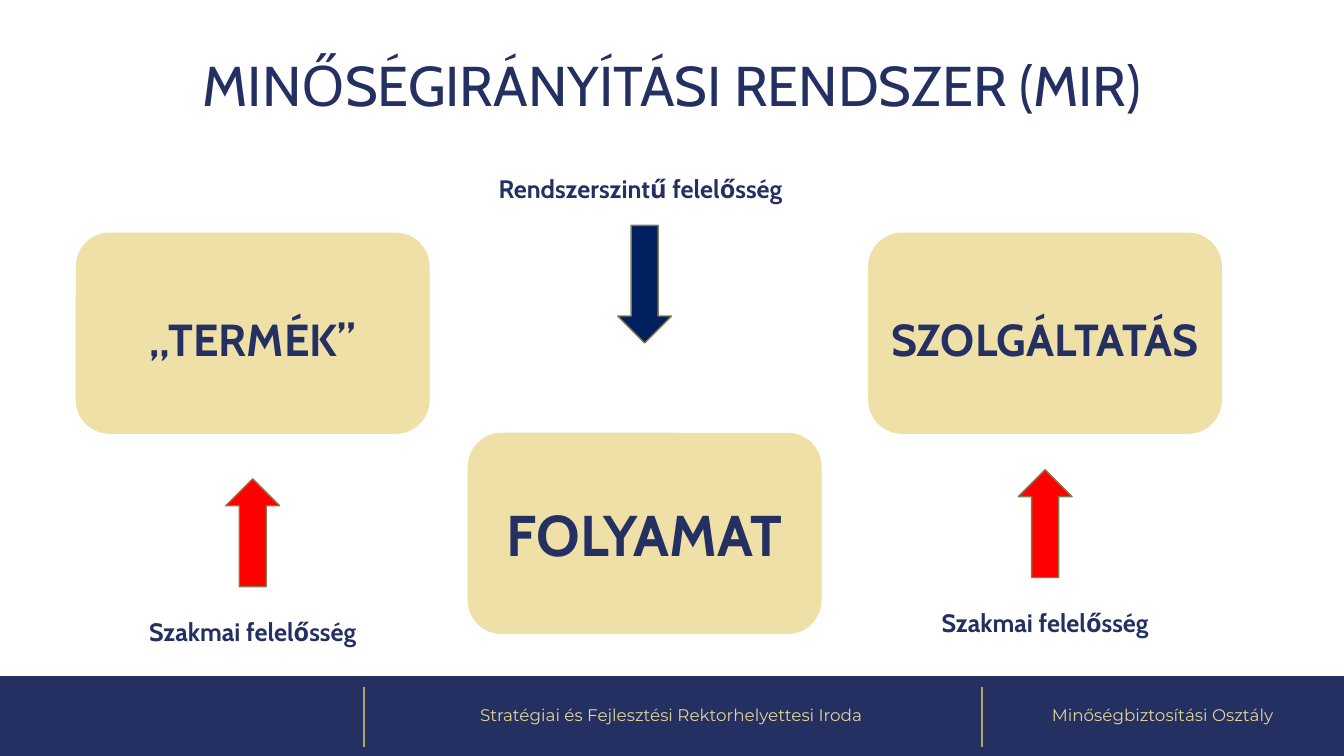
import dataclasses

import lxml.etree
import pptx
import pptx.dml.color
import pptx.enum.shapes
import pptx.enum.text
import pptx.oxml.ns
import pptx.util

Pt = pptx.util.Pt
SHAPE = pptx.enum.shapes.MSO_SHAPE
MIDDLE = pptx.enum.text.MSO_ANCHOR.MIDDLE
TOP = pptx.enum.text.MSO_ANCHOR.TOP


@dataclasses.dataclass(frozen=True)
class Theme:
    """Colours, fonts and type sizes of the slide."""
    navy: str = "242F62"
    gold: str = "E3D496"
    card: str = "EFE0A7"
    divider: str = "B3A16E"
    arrow_edge: str = "847751"
    system: str = "002060"
    professional: str = "FF0000"
    heading_font: str = "Cabin"
    footer_font: str = "Montserrat"
    title_size: int = 40
    process_size: int = 41
    card_size: int = 32
    label_size: int = 18
    footer_size: int = 12


THEME = Theme()


def rgb(colour):
    """Turn a hex string into a colour."""
    return pptx.dml.color.RGBColor.from_string(colour)


def place(shape, box):
    """Set the position and size of a shape in points."""
    shape.left, shape.top, shape.width, shape.height = map(Pt, box)


def write(shape, text, size, colour, font, bold=False, anchor=MIDDLE, spacing=1.0):
    """Put one centred, formatted paragraph into a shape."""
    frame = shape.text_frame
    frame.text = text
    frame.word_wrap = True
    frame.auto_size = pptx.enum.text.MSO_AUTO_SIZE.NONE
    frame.vertical_anchor = anchor
    paragraph = frame.paragraphs[0]
    paragraph.alignment = pptx.enum.text.PP_ALIGN.CENTER
    paragraph.line_spacing = spacing
    paragraph.space_before = Pt(0)
    letters = paragraph.runs[0].font
    letters.size = Pt(size)
    letters.name = font
    letters.bold = bold
    letters.color.rgb = rgb(colour)


def add_figure(slide, kind, box, fill, edge=None, edge_width=1):
    """Add a flat filled preset shape."""
    figure = slide.shapes.add_shape(kind, *map(Pt, box))
    figure.shadow.inherit = False
    figure.fill.solid()
    figure.fill.fore_color.rgb = rgb(fill)
    if edge:
        figure.line.color.rgb = rgb(edge)
        figure.line.width = Pt(edge_width)
    else:
        figure.line.fill.background()
    return figure


def add_card(slide, text, left, top, size, drop=0):
    """Add a rounded card, its text lowered by a top inset."""
    card = add_figure(slide, SHAPE.ROUNDED_RECTANGLE, (left, top, 252, 143),
                      THEME.card, THEME.card, 0.75)
    write(card, text, size, THEME.navy, THEME.heading_font, bold=True)
    card.text_frame.margin_top = Pt(3.6 + drop)


def add_arrow(slide, left, top, height, fill, rotation=0):
    """Add a block arrow that points down unless rotated."""
    arrow = add_figure(slide, SHAPE.DOWN_ARROW, (left, top, 38.5, height),
                       fill, THEME.arrow_edge)
    arrow.rotation = rotation


def add_label(slide, text, left, top, width):
    """Add a bold responsibility label."""
    label = slide.shapes.add_textbox(Pt(left), Pt(top), Pt(width), Pt(29))
    write(label, text, THEME.label_size, THEME.navy, THEME.heading_font,
          bold=True, anchor=TOP)


def add_divider(slide, x):
    """Add a vertical footer divider."""
    divider = slide.shapes.add_connector(
        pptx.enum.shapes.MSO_CONNECTOR.STRAIGHT, Pt(x), Pt(491), Pt(x), Pt(533.5))
    divider.line.color.rgb = rgb(THEME.divider)
    divider.line.width = Pt(1.5)
    lxml.etree.SubElement(divider._element.spPr, pptx.oxml.ns.qn("a:effectLst"))


def write_footer(placeholder, text, left, width):
    """Turn a body placeholder into an unbulleted footer entry."""
    place(placeholder, (left, 483, width, 57))
    write(placeholder, text, THEME.footer_size, THEME.gold, THEME.footer_font,
          spacing=0.9)
    properties = placeholder.text_frame.paragraphs[0]._p.get_or_add_pPr()
    properties.set("marL", "0")
    properties.set("indent", "0")
    lxml.etree.SubElement(properties, pptx.oxml.ns.qn("a:buNone"))


def main():
    """Build and save the slide."""
    deck = pptx.Presentation()
    deck.slide_width, deck.slide_height = Pt(960), Pt(540)
    slide = deck.slides.add_slide(deck.slide_layouts[3])
    title, office, department = slide.placeholders

    footer_bar = add_figure(slide, SHAPE.RECTANGLE, (0, 483, 960, 57), THEME.navy)
    title._element.addprevious(footer_bar._element)
    for x in (260, 701.5):
        add_divider(slide, x)

    place(title, (66, 27.5, 828, 71))
    write(title, "MINŐSÉGIRÁNYÍTÁSI RENDSZER (MIR)", THEME.title_size,
          THEME.navy, THEME.heading_font, spacing=0.9)
    write_footer(office, "Stratégiai és Fejlesztési Rektorhelyettesi Iroda", 258.5, 442)
    write_footer(department, "Minőségbiztosítási Osztály", 701, 259)

    add_card(slide, "FOLYAMAT", 334.5, 309.5, THEME.process_size)
    add_label(slide, "Rendszerszintű felelősség", 295, 120.5, 325)
    add_arrow(slide, 441.25, 161, 84, THEME.system)

    sides = (("„TERMÉK”", 54.5, 342), ("SZOLGÁLTATÁS", 620.5, 335.5))
    for name, left, arrow_top in sides:
        add_card(slide, name, left, 166.5, THEME.card_size, drop=7)
        add_arrow(slide, left + 106.75, arrow_top, 77, THEME.professional, rotation=180)
        add_label(slide, "Szakmai felelősség", left + 11.5, arrow_top + 94.5, 229)

    deck.save("out.pptx")


if __name__ == "__main__":
    main()
